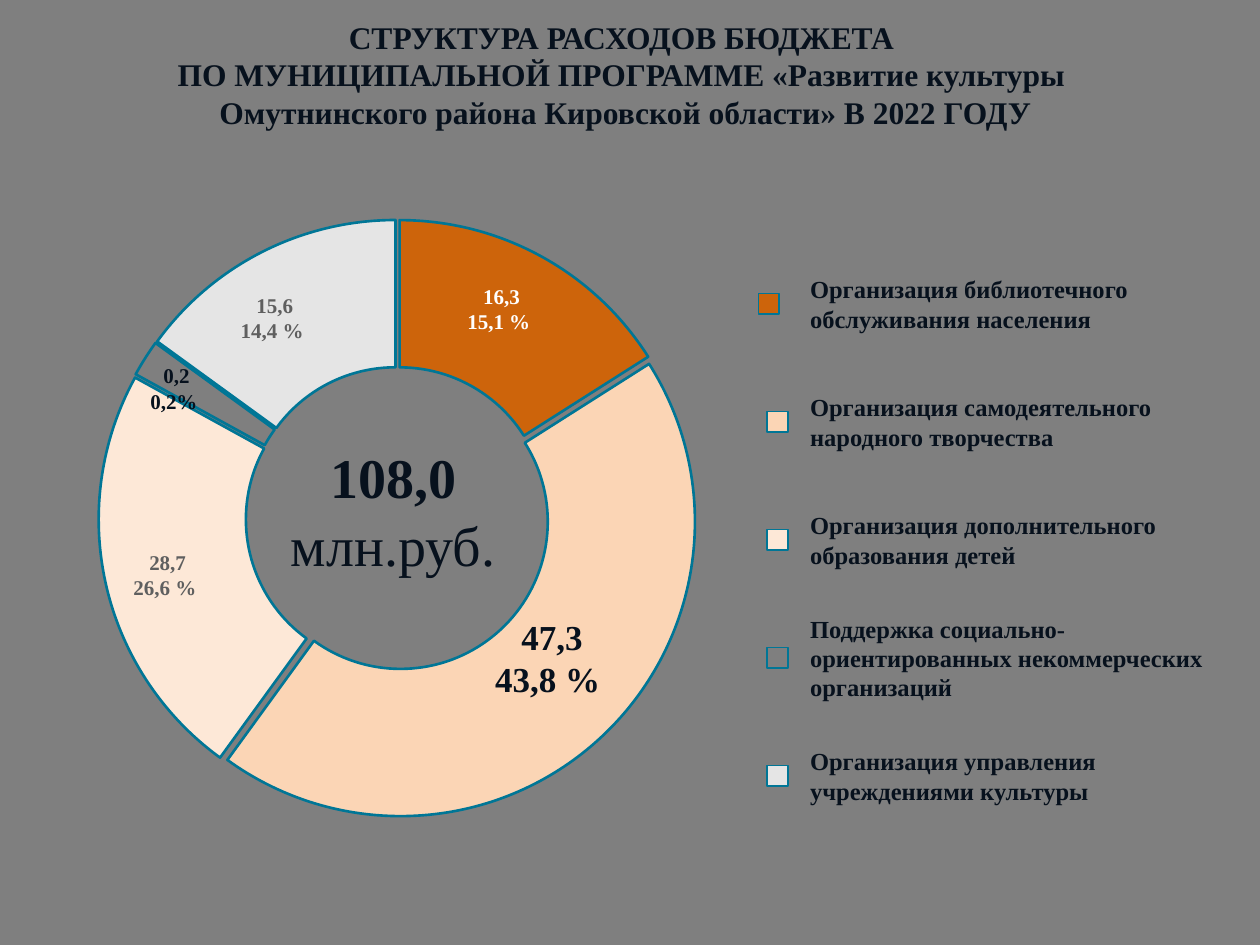
from lxml.etree import SubElement
from pptx import Presentation
from pptx.chart.data import CategoryChartData
from pptx.dml.color import RGBColor
from pptx.enum.chart import XL_CHART_TYPE
from pptx.enum.shapes import MSO_SHAPE
from pptx.enum.text import MSO_ANCHOR, PP_ALIGN
from pptx.oxml import parse_xml
from pptx.oxml.ns import nsdecls, qn
from pptx.util import Cm, Pt

GREY = RGBColor(0x7F, 0x7F, 0x7F)
INK = RGBColor(0x07, 0x11, 0x1D)
DIM = RGBColor(0x5F, 0x5F, 0x5F)
WHITE = RGBColor(0xFF, 0xFF, 0xFF)
TEAL = RGBColor(0x00, 0x76, 0x96)
RUST = RGBColor(0xCD, 0x64, 0x0B)
PEACH = RGBColor(0xFB, 0xD5, 0xB5)
CREAM = RGBColor(0xFD, 0xE8, 0xD7)
PALE = RGBColor(0xE5, 0xE5, 0xE5)

TITLE = [
    "СТРУКТУРА РАСХОДОВ БЮДЖЕТА ",
    "ПО МУНИЦИПАЛЬНОЙ ПРОГРАММЕ «Развитие культуры ",
    "Омутнинского района Кировской области» В 2022 ГОДУ",
]
VALUES = [16, None, None, 44, None, None, 23, 2, None, 15, None]
SLICES = {0: RUST, 3: PEACH, 6: CREAM, 7: GREY, 9: PALE}
LABELS = [
    (7.24, 2.8, ["16,3", "15,1 % "], 12, WHITE),
    (8.26, 9.5, ["47,3", "43,8 % "], 20, INK),
    (0.51, 8.16, ["28,7", "26,6 % "], 12, DIM),
    (0.69, 4.4, ["0,2", "0,2% "], 12, INK),
    (2.67, 2.98, ["15,6", "14,4 % "], 12, DIM),
]
ITEMS = [
    (0, RUST, "Организация библиотечного обслуживания населения"),
    (0.18, PEACH, "Организация самодеятельного народного творчества"),
    (0.18, CREAM, "Организация дополнительного образования детей"),
    (0.18, GREY, "Поддержка социально-ориентированных некоммерческих организаций"),
    (0.18, PALE, "Организация управления учреждениями культуры"),
]


def style(font, size, color=INK, bold=True):
    """Apply the slide's type style to a font."""
    look = {"name": "Times New Roman", "size": Pt(size), "bold": bold}
    for key, value in look.items():
        setattr(font, key, value)
    font.color.rgb = color


def paint(form, color, width):
    """Give a shape or slice its fill and the teal outline."""
    form.fill.solid()
    form.fill.fore_color.rgb = color
    form.line.color.rgb = TEAL
    form.line.width = Pt(width)


def write(slide, box, lines, size, color=INK, align=PP_ALIGN.CENTER,
          anchor=MSO_ANCHOR.TOP):
    """Add a wrapped text box with one paragraph per line."""
    frame = slide.shapes.add_textbox(*map(Cm, box)).text_frame
    for key, value in {"word_wrap": True, "vertical_anchor": anchor}.items():
        setattr(frame, key, value)
    for i, line in enumerate(lines):
        para = frame.add_paragraph() if i else frame.paragraphs[0]
        para.alignment = align
        run = para.add_run()
        run.text = line
        style(run.font, size, color)
    return frame


def add_ring(slide, box):
    """Draw the doughnut with its slice labels and total."""
    left, top = box[:2]
    data = CategoryChartData()
    data.categories = [str(i + 1) for i in range(len(VALUES))]
    data.add_series("Series 1", VALUES)
    chart = slide.shapes.add_chart(
        XL_CHART_TYPE.DOUGHNUT, *map(Cm, box), data).chart
    for key in ("has_title", "has_legend"):
        setattr(chart, key, False)
    font = chart.font
    font.name, font.size, font.color.rgb = "Vollkorn", Pt(18), WHITE
    plot = chart.plots[0]
    plot.vary_by_categories = True
    plot.has_data_labels = False
    ring = plot.series[0]
    for i, color in SLICES.items():
        paint(ring.points[i].format, color, 1.5)
    spread(chart)
    for x, y, lines, size, color in LABELS:
        write(slide, (left + x, top + y, 3.2, 1.96), lines, size, color)
    total = write(slide, (left + 3.48, top + 5.49, 6.35, 4.01), ["108,0 "],
                  32, anchor=MSO_ANCHOR.MIDDLE)
    unit = total.paragraphs[0].add_run()
    unit.text = "млн.руб."
    style(unit.font, 32, bold=False)


def spread(chart):
    """Set the plot's place in the chart and pull the slices apart."""
    area = chart._chartSpace.find(".//" + qn("c:plotArea"))
    for old in area.findall(qn("c:layout")):
        area.remove(old)
    layout = parse_xml(f"<c:layout {nsdecls('c')}/>")
    area.insert(0, layout)
    manual = SubElement(layout, qn("c:manualLayout"))
    spots = {"layoutTarget": "inner", "xMode": "edge", "yMode": "edge",
             "x": "0.03", "y": "0.11", "w": "0.53", "h": "0.81"}
    for key, value in spots.items():
        SubElement(manual, qn("c:" + key)).set("val", value)
    parts = area.findall(".//" + qn("c:dPt"))
    for node in [parts[0]] + [part.find(qn("c:spPr")) for part in parts]:
        node.addprevious(parse_xml(f"<c:explosion {nsdecls('c')} val='3'/>"))


def add_legend(slide, box):
    """Stack the legend rows evenly in the box."""
    left, top, width, height = box
    row, side, indent = height / len(ITEMS), 0.41, 0.79
    for i, (shift, color, text) in enumerate(ITEMS):
        y = top + i * row
        spot = (left + shift, y + (row - side) / 2, side, side)
        key = slide.shapes.add_shape(MSO_SHAPE.RECTANGLE, *map(Cm, spot))
        key.shadow.inherit = False
        paint(key, color, 1)
        write(slide, (left + indent, y, width - indent, row), [text], 14,
              align=PP_ALIGN.LEFT, anchor=MSO_ANCHOR.MIDDLE)


def main():
    """Build and save the slide."""
    deck = Presentation()
    deck.slide_width, deck.slide_height = Cm(25.4), Cm(19.05)
    slide = deck.slides.add_slide(deck.slide_layouts[6])
    back = slide.background.fill
    back.solid()
    back.fore_color.rgb = GREY
    add_ring(slide, (1.27, 2.79, 22.86, 14.88))
    add_legend(slide, (15.29, 4.93, 9.32, 11.9))
    write(slide, (0.71, 0.23, 23.8, 2.57), TITLE, 18)
    deck.save("out.pptx")


if __name__ == "__main__":
    main()
